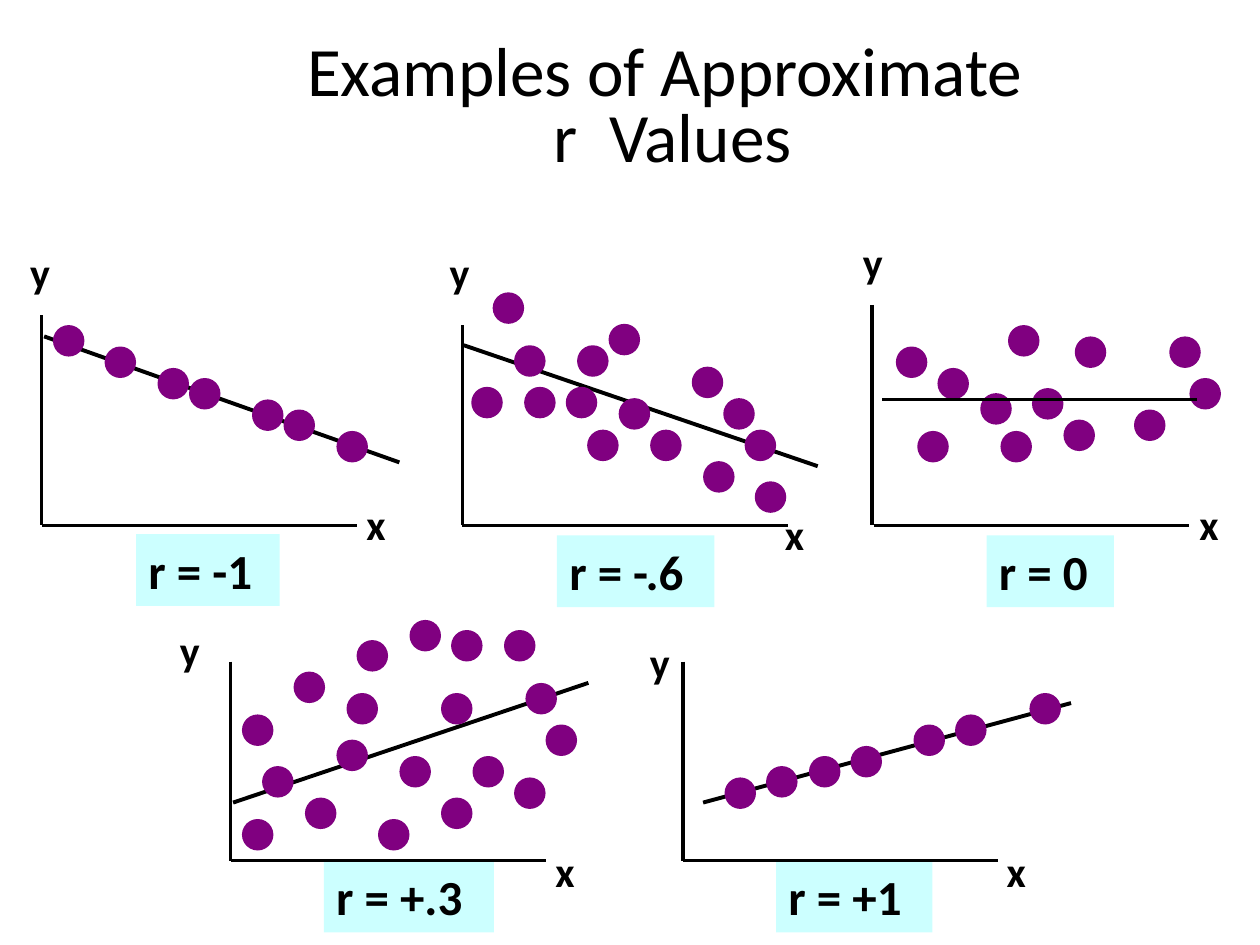
from dataclasses import dataclass

from pptx import Presentation
from pptx.dml.color import RGBColor
from pptx.enum.shapes import MSO_CONNECTOR, MSO_SHAPE
from pptx.enum.text import MSO_ANCHOR, MSO_AUTO_SIZE, PP_ALIGN
from pptx.oxml.ns import qn
from pptx.util import Inches, Pt
from lxml.etree import SubElement

FONT = "Calibri"
BLACK = "000000"
PURPLE = "800080"
PALE_CYAN = "CCFFFF"
DOT_SIZE = 0.25


@dataclass
class Panel:
    box: tuple
    trend: tuple
    dots: list
    y_label: tuple
    x_label: tuple
    caption: str
    caption_box: tuple
    axis_start: float = 0
    trend_in_front: bool = False
    trend_width: float = 2.25


PANELS = [
    Panel(
        box=(0.33, 2.5, 2.5, 1.67),
        trend=(0.02, 0.17, 2.84, 1.17),
        dots=[(0.09, 0.08), (0.5, 0.25), (0.92, 0.42), (1.17, 0.5),
              (1.67, 0.67), (1.92, 0.75), (2.34, 0.92)],
        y_label=(-0.19, -0.59), x_label=(2.48, 1.41),
        caption="r = -1", caption_box=(0.75, 1.74, 1.14),
    ),
    Panel(
        box=(3.67, 2.58, 2.58, 1.59),
        trend=(0.01, 0.16, 2.82, 1.12),
        dots=[(0.07, 0.49), (0.24, -0.26), (0.41, 0.16), (0.49, 0.49),
              (0.82, 0.49), (0.91, 0.16), (0.99, 0.83), (1.16, -0.01),
              (1.24, 0.58), (1.49, 0.83), (1.82, 0.33), (1.91, 1.08),
              (2.07, 0.58), (2.24, 0.83), (2.32, 1.24)],
        y_label=(-0.2, -0.67), x_label=(2.46, 1.41),
        caption="r = -.6", caption_box=(0.75, 1.67, 1.25),
    ),
    Panel(
        box=(6.92, 2.42, 2.52, 1.75),
        trend=(0.08, 0.75, 2.58, 0.75),
        dots=[(0.19, 0.33), (0.36, 1), (0.52, 0.5), (0.86, 0.7),
              (1.02, 1), (1.08, 0.16), (1.27, 0.66), (1.52, 0.91),
              (1.61, 0.25), (2.08, 0.83), (2.36, 0.25), (2.52, 0.58)],
        y_label=(-0.17, -0.59), x_label=(2.5, 1.49),
        caption="r = 0", caption_box=(0.91, 1.83, 1.01),
        axis_start=0.02, trend_in_front=True, trend_width=2,
    ),
    Panel(
        box=(1.83, 5.25, 2.5, 1.58),
        trend=(0.02, 1.12, 2.84, 0.17),
        dots=[(0.09, 0.42), (0.09, 1.25), (0.25, 0.83), (0.5, 0.08),
              (0.59, 1.08), (0.84, 0.62), (0.92, 0.25), (1, -0.17),
              (1.17, 1.25), (1.34, 0.75), (1.42, -0.33), (1.67, 0.25),
              (1.67, 1.08), (1.75, -0.25), (1.92, 0.75), (2.17, -0.25),
              (2.25, 0.92), (2.34, 0.17), (2.5, 0.5)],
        y_label=(-0.5, -0.34), x_label=(2.48, 1.41),
        caption="r = +.3", caption_box=(0.74, 1.58, 1.35),
    ),
    Panel(
        box=(5.42, 5.25, 2.5, 1.58),
        trend=(0.16, 1.12, 3.08, 0.33),
        dots=[(0.33, 0.92), (0.66, 0.83), (1, 0.75), (1.33, 0.67),
              (1.83, 0.5), (2.16, 0.42), (2.75, 0.25)],
        y_label=(-0.36, -0.25), x_label=(2.47, 1.41),
        caption="r = +1", caption_box=(0.74, 1.58, 1.24),
    ),
]


def color(value):
    return RGBColor.from_string(value)


def style_text(shape, text, size, bold):
    frame = shape.text_frame
    frame.text = text
    frame.word_wrap = False
    para = frame.paragraphs[0]
    para.alignment = PP_ALIGN.LEFT
    for span in para.runs:
        span.font.name = FONT
        span.font.size = Pt(size)
        span.font.bold = bold
        span.font.color.rgb = color(BLACK)
    return frame


def add_label(page, text, left, top):
    label = page.shapes.add_textbox(Inches(left), Inches(top), Inches(0.39), Inches(0.5))
    frame = style_text(label, text, 24, True)
    frame.auto_size = MSO_AUTO_SIZE.SHAPE_TO_FIT_TEXT


def add_filled(page, kind, left, top, width, height, fill):
    shape = page.shapes.add_shape(kind, Inches(left), Inches(top), Inches(width), Inches(height))
    shape.shadow.inherit = False
    shape.fill.solid()
    shape.fill.fore_color.rgb = color(fill)
    shape.line.fill.background()
    return shape


def add_line(page, start_x, start_y, end_x, end_y, width=2):
    line = page.shapes.add_connector(
        MSO_CONNECTOR.STRAIGHT,
        Inches(start_x), Inches(start_y), Inches(end_x), Inches(end_y))
    line.line.color.rgb = color(BLACK)
    line.line.width = Pt(width)
    SubElement(line._element.spPr, qn("a:effectLst"))


def add_title(page, left, top, width, height):
    title = page.shapes.add_textbox(Inches(left), Inches(top), Inches(width), Inches(height))
    frame = style_text(title, "Examples of Approximate \vr  Values", 39.6, False)
    frame.word_wrap = True
    frame.vertical_anchor = MSO_ANCHOR.MIDDLE
    para = frame.paragraphs[0]
    para.alignment = PP_ALIGN.CENTER
    para.line_spacing = 0.8


def add_scatter_panel(page, panel):
    left, top, width, height = panel.box
    base = top + height

    def add_trend():
        start_x, start_y, end_x, end_y = panel.trend
        add_line(page, left + start_x, top + start_y,
                 left + end_x, top + end_y, panel.trend_width)

    caption_x, caption_y, caption_width = panel.caption_box
    caption = add_filled(page, MSO_SHAPE.RECTANGLE, left + caption_x,
                         top + caption_y, caption_width, 0.57, PALE_CYAN)
    frame = style_text(caption, panel.caption, 28, True)
    frame.vertical_anchor = MSO_ANCHOR.TOP
    frame.auto_size = MSO_AUTO_SIZE.SHAPE_TO_FIT_TEXT

    add_line(page, left, top, left, base)
    add_line(page, left + panel.axis_start, base, left + width, base)
    if not panel.trend_in_front:
        add_trend()
    for dot_x, dot_y in panel.dots:
        add_filled(page, MSO_SHAPE.OVAL, left + dot_x, top + dot_y,
                   DOT_SIZE, DOT_SIZE, PURPLE)
    if panel.trend_in_front:
        add_trend()
    for text, (label_x, label_y) in (("y", panel.y_label), ("x", panel.x_label)):
        add_label(page, text, left + label_x, top + label_y)


def main():
    deck = Presentation()
    deck.slide_width = Inches(10)
    deck.slide_height = Inches(7.5)
    page = deck.slides.add_slide(deck.slide_layouts[6])
    add_title(page, 1.08, 0.33, 8.52, 1.08)
    for panel in PANELS:
        add_scatter_panel(page, panel)
    deck.save("out.pptx")


if __name__ == "__main__":
    main()
